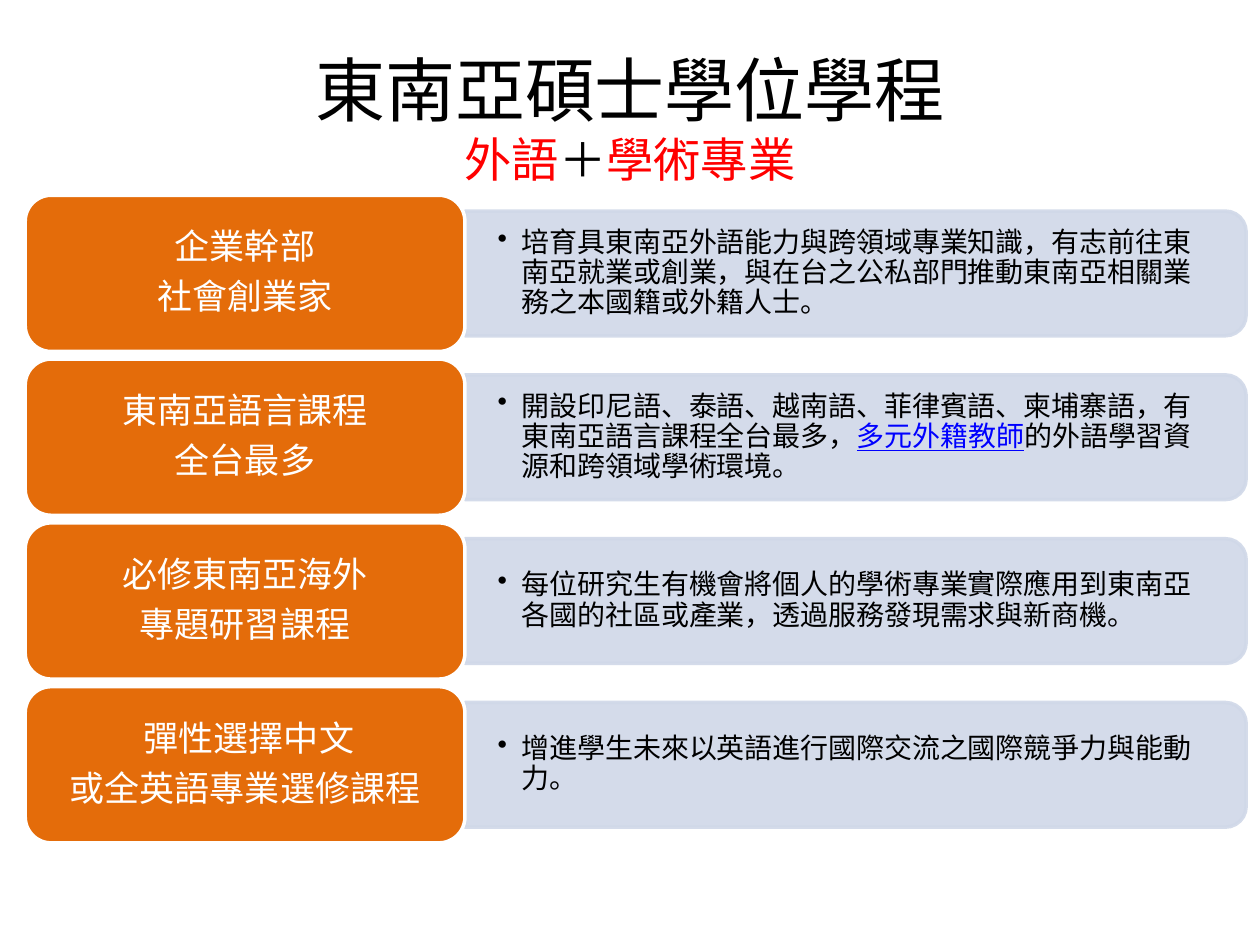
"""Build a title slide section with four labelled programme rows."""
import copy
from dataclasses import dataclass

import lxml.etree
import pptx
import pptx.dml.color
import pptx.enum.shapes
import pptx.enum.text
import pptx.oxml.ns
import pptx.util
from pptx.util import Inches

FONT = "Noto Sans CJK TC"
TITLE_FONT = "Noto Sans CJK JP"
BLACK, WHITE, RED, BLUE = "000000", "FFFFFF", "FF0000", "0000FF"
ORANGE, PALE = "E46C0A", "D0D8E8"
LABEL_LEFT, LABEL_WIDTH, LABEL_HEIGHT = 0.2, 3.49, 1.24
PANEL_LEFT, PANEL_LENGTH, PANEL_HEIGHT = 3.69, 6.2, 0.99
DETAIL_LEFT, DETAIL_WIDTH, DETAIL_HEIGHT = 3.68, 6.15, 0.9
FIRST_TOP, ROW_PITCH = 1.55, 1.3
MIDDLE = pptx.enum.text.MSO_ANCHOR.MIDDLE
CENTER = pptx.enum.text.PP_ALIGN.CENTER


@dataclass(frozen=True)
class Piece:
    """A stretch of text in one style."""
    text: str
    color: str = BLACK
    underline: bool = False


@dataclass(frozen=True)
class Row:
    """A label with its description."""
    label: tuple[str, ...]
    detail: tuple[Piece, ...]


ROWS = (
    Row(("企業幹部", "社會創業家"),
        (Piece("培育具東南亞外語能力與跨領域專業知識，有志前往東南亞就業或創業，"
               "與在台之公私部門推動東南亞相關業務之本國籍或外籍人士。"),)),
    Row(("東南亞語言課程", "全台最多"),
        (Piece("開設印尼語、泰語、越南語、菲律賓語、柬埔寨語，有東南亞語言課程全台最多，"),
         Piece("多元外籍教師", BLUE, True),
         Piece("的外語學習資源和跨領域學術環境。"))),
    Row(("必修東南亞海外", "專題研習課程"),
        (Piece("每位研究生有機會將個人的學術專業實際應用到東南亞各國的社區或產業，"
               "透過服務發現需求與新商機。"),)),
    Row((" 彈性選擇中文", "或全英語專業選修課程"),
        (Piece("增進學生未來以英語進行國際交流之國際競爭力與能動力。"),)),
)


def rgb(value: str) -> pptx.dml.color.RGBColor:
    """Turn a hex string into a colour."""
    return pptx.dml.color.RGBColor.from_string(value)


def apply_format(target, values: dict) -> None:
    """Set each attribute named in the dict."""
    for name, value in values.items():
        setattr(target, name, value)


def add_child(parent, tag: str, **attributes: str):
    """Append a DrawingML element."""
    return lxml.etree.SubElement(parent, pptx.oxml.ns.qn(tag), attributes)


def add_piece(paragraph, piece: Piece, size: float, font: str = FONT):
    """Add a run with its Latin and East Asian font."""
    run = paragraph.add_run()
    run.text = piece.text
    apply_format(run.font, {"size": pptx.util.Pt(size), "name": font,
                            "underline": piece.underline or None})
    run.font.color.rgb = rgb(piece.color)
    add_child(run.font._element, "a:ea", typeface=font)
    return run


def format_frame(frame, side: float, edge: float) -> None:
    """Wrap and centre a text frame vertically with the given insets."""
    apply_format(frame, {
        "word_wrap": True, "vertical_anchor": MIDDLE,
        "auto_size": pptx.enum.text.MSO_AUTO_SIZE.NONE,
        "margin_left": Inches(side), "margin_right": Inches(side),
        "margin_top": Inches(edge), "margin_bottom": Inches(edge)})


def add_box(slide, kind, left: float, top: float, width: float, height: float,
            fill: str, line: str):
    """Add a flat shape with a two-point outline."""
    shape = slide.shapes.add_shape(kind, Inches(left), Inches(top), Inches(width), Inches(height))
    shape.shadow.inherit = False
    shape.fill.solid()
    shape.fill.fore_color.rgb = rgb(fill)
    shape.line.color.rgb = rgb(line)
    shape.line.width = pptx.util.Pt(2)
    return shape


def add_panel(slide, middle: float) -> None:
    """Add the translucent panel, turned so its round corners face right."""
    center = PANEL_LEFT + PANEL_LENGTH / 2
    panel = add_box(slide, pptx.enum.shapes.MSO_SHAPE.ROUND_2_SAME_RECTANGLE,
                    center - PANEL_HEIGHT / 2, middle - PANEL_LENGTH / 2,
                    PANEL_HEIGHT, PANEL_LENGTH, PALE, PALE)
    panel.rotation = 90
    for color in panel._element.spPr.iter(pptx.oxml.ns.qn("a:srgbClr")):
        add_child(color, "a:alpha", val="90000")


def add_detail(slide, pieces: tuple[Piece, ...], middle: float) -> None:
    """Add the bulleted description over its panel."""
    box = slide.shapes.add_textbox(Inches(DETAIL_LEFT), Inches(middle - DETAIL_HEIGHT / 2),
                                   Inches(DETAIL_WIDTH), Inches(DETAIL_HEIGHT))
    format_frame(box.text_frame, 0.27, 0.14)
    paragraph = box.text_frame.paragraphs[0]
    apply_format(paragraph, {"line_spacing": 0.9, "level": 1})
    properties = paragraph._element.get_or_add_pPr()
    properties.set("marL", str(Inches(0.19)))
    properties.set("indent", str(-Inches(0.19)))
    add_child(properties, "a:buChar", char="•")
    for piece in pieces:
        add_piece(paragraph, piece, 16)


def add_label(slide, lines: tuple[str, ...], top: float) -> None:
    """Add the orange label with one paragraph per line."""
    label = add_box(slide, pptx.enum.shapes.MSO_SHAPE.ROUNDED_RECTANGLE,
                    LABEL_LEFT, top, LABEL_WIDTH, LABEL_HEIGHT, ORANGE, WHITE)
    frame = label.text_frame
    format_frame(frame, 0.14, 0.1)
    for index, line in enumerate(lines):
        paragraph = frame.add_paragraph() if index else frame.paragraphs[0]
        apply_format(paragraph, {"alignment": CENTER, "line_spacing": 0.9,
                                 "space_after": pptx.util.Pt(7)})
        add_piece(paragraph, Piece(line, WHITE), 20)


def add_title(slide) -> None:
    """Fill the title placeholder with the heading and its subheading."""
    title = slide.shapes.title
    apply_format(title, {"left": Inches(0.5), "top": Inches(0.3),
                         "width": Inches(9), "height": Inches(1.25)})
    format_frame(title.text_frame, 0.1, 0.05)
    paragraph = title.text_frame.paragraphs[0]
    paragraph.alignment = CENTER
    heading = add_piece(paragraph, Piece("東南亞碩士學位學程"), 40, TITLE_FONT)
    paragraph.add_line_break()
    paragraph._element[-1].append(copy.deepcopy(heading.font._element))
    for piece in (Piece("外語", RED), Piece("＋"), Piece("學術專業", RED)):
        add_piece(paragraph, piece, 27)


def main() -> None:
    """Build and save the slide."""
    presentation = pptx.Presentation()
    apply_format(presentation, {"slide_width": Inches(10), "slide_height": Inches(7.5)})
    slide = presentation.slides.add_slide(presentation.slide_layouts[5])
    add_title(slide)
    for index, row in enumerate(ROWS):
        top = FIRST_TOP + index * ROW_PITCH
        middle = top + LABEL_HEIGHT / 2
        add_panel(slide, middle)
        add_detail(slide, row.detail, middle)
        add_label(slide, row.label, top)
    presentation.save("out.pptx")


if __name__ == "__main__":
    main()
